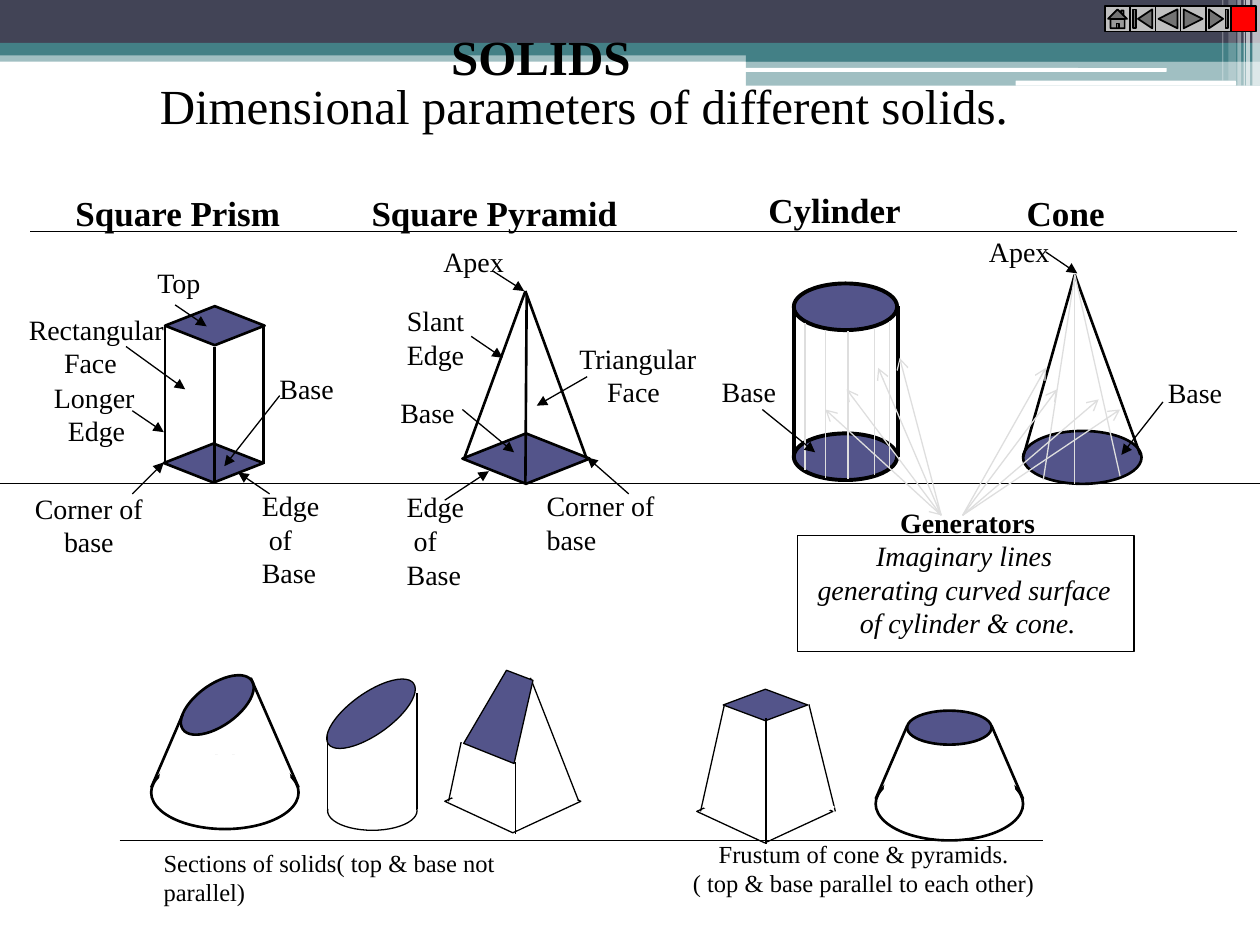
from lxml import etree
from pptx import Presentation
from pptx.dml.color import RGBColor
from pptx.enum.shapes import MSO_CONNECTOR, MSO_SHAPE
from pptx.enum.text import MSO_ANCHOR, MSO_AUTO_SIZE, PP_ALIGN
from pptx.oxml.ns import qn
from pptx.util import Inches, Pt

RECTANGLE, ROUNDED = MSO_SHAPE.RECTANGLE, MSO_SHAPE.ROUNDED_RECTANGLE
OVAL, DIAMOND = MSO_SHAPE.OVAL, MSO_SHAPE.DIAMOND
STRAIGHT = MSO_CONNECTOR.STRAIGHT
LEFT, CENTER = PP_ALIGN.LEFT, PP_ALIGN.CENTER
TOP = MSO_ANCHOR.TOP
FIT_SHAPE = MSO_AUTO_SIZE.SHAPE_TO_FIT_TEXT
NAVIGATION = (MSO_SHAPE.ACTION_BUTTON_HOME, MSO_SHAPE.ACTION_BUTTON_BEGINNING,
              MSO_SHAPE.ACTION_BUTTON_BACK_OR_PREVIOUS, MSO_SHAPE.ACTION_BUTTON_FORWARD_OR_NEXT,
              MSO_SHAPE.ACTION_BUTTON_END, MSO_SHAPE.ACTION_BUTTON_CUSTOM)
FONT = "Times New Roman"
BLACK, WHITE, PURPLE, TEAL, PALE = "000000", "FFFFFF", "53548A", "438086", "DEDEDE"
TILT = 324.6


def color(value):
    """Turn a hex string into a colour."""
    return RGBColor.from_string(value)


def paint(shape, fill, line=None, width=0.75, opacity=100):
    """Set the fill, opacity and outline of a shape."""
    shape.shadow.inherit = False
    shape.fill.solid()
    shape.fill.fore_color.rgb = color(fill)
    if opacity < 100:
        fill_color = shape._element.spPr.find(qn("a:solidFill"))[0]
        etree.SubElement(fill_color, qn("a:alpha")).set("val", str(opacity * 1000))
    if line:
        shape.line.color.rgb = color(line)
        shape.line.width = Pt(width)
    else:
        shape.line.fill.background()


def write(shape, paragraphs, size, align=LEFT, wrap=False):
    """Write (text, style letters, indent) paragraphs into a shape."""
    frame = shape.text_frame
    frame.word_wrap, frame.auto_size, frame.vertical_anchor = wrap, FIT_SHAPE, TOP
    for index, (text, style, indent) in enumerate(paragraphs):
        paragraph = frame.add_paragraph() if index else frame.paragraphs[0]
        paragraph.alignment = align
        if indent:
            paragraph._p.get_or_add_pPr().set("marL", str(Inches(indent)))
        run = paragraph.add_run()
        run.text = text
        run.font.name, run.font.size = FONT, Pt(size)
        run.font.bold, run.font.italic = "b" in style, "i" in style
        run.font.color.rgb = color(BLACK)


class Region:
    """A part of the slide whose contents are measured from its own corner."""

    def __init__(self, shapes, left, top):
        """Keep the shape collection and the corner in inches."""
        self.shapes, self.left, self.top = shapes, left, top

    def place(self, x, y):
        """Return slide lengths for a point of the region."""
        return Inches(self.left + x), Inches(self.top + y)

    def group(self, x=0, y=0):
        """Open a group whose corner lies at the given point."""
        return Region(self.shapes.add_group_shape().shapes, self.left + x, self.top + y)

    def shape(self, kind, box, fill, line=None, width=0.75, opacity=100, rotation=0):
        """Add a preset shape."""
        x, y, w, h = box
        shape = self.shapes.add_shape(kind, *self.place(x, y), Inches(w), Inches(h))
        shape.rotation = rotation
        paint(shape, fill, line, width, opacity)

    def line(self, start, end, width=0.75, line=BLACK, **arrowheads):
        """Add a straight line; headEnd and tailEnd name its arrowheads."""
        connector = self.shapes.add_connector(STRAIGHT, *self.place(*start), *self.place(*end))
        connector.line.color.rgb = color(line)
        connector.line.width = Pt(width)
        for tag in sorted(arrowheads):
            etree.SubElement(connector.line._get_or_add_ln(), qn("a:" + tag)).set("type", arrowheads[tag])
        etree.SubElement(connector._element.spPr, qn("a:effectLst"))

    def pointer(self, start, end):
        """Add a line with a triangle at its end."""
        self.line(start, end, tailEnd="triangle")

    def label(self, box, *lines, size=16, style="", indent=0, align=LEFT, wrap=False):
        """Add a text box; indent applies to every line after the first."""
        x, y, w, h = box
        shape = self.shapes.add_textbox(*self.place(x, y), Inches(w), Inches(h))
        write(shape, [(text, style, indent if i else 0) for i, text in enumerate(lines)], size, align, wrap)

    def heading(self, x, y, width, text):
        """Add the bold name of a solid."""
        self.label((x, y, width, 0.43), text, size=20, style="b")


def add_header(slide, left, top):
    """Draw the banner, the title and the subtitle."""
    banner = Region(slide.shapes, left, top)
    for box, fill, opacity in (((0, 0.4, 10, 0.09), TEAL, 50), ((0, 0, 10, 0.34), "424456", 100),
                               ((0, 0.34, 10, 0.1), TEAL, 100), ((5.92, 0.39, 4.08, 0.1), TEAL, 100),
                               ((5.92, 0.48, 4.08, 0.2), TEAL, 50)):
        banner.shape(RECTANGLE, box, fill, opacity=opacity)
    banner.shape(ROUNDED, (5.91, 0.54, 3.35, 0.03), WHITE)
    banner.shape(ROUNDED, (8.06, 0.64, 1.75, 0.04), WHITE)
    for x, width, height, opacity in ((9.94, 0.06, 0.68, 65), (9.89, 0.03, 0.68, 65), (9.87, 0.01, 0.68, 60),
                                      (9.82, 0.03, 0.68, 40), (9.75, 0.06, 0.64, 20), (9.7, 0.01, 0.64, 30)):
        banner.shape(RECTANGLE, (x, 0, width, height), WHITE, opacity=opacity)
    title = slide.shapes.title
    slide.shapes._spTree.append(title._element)
    title.left, title.top = banner.place(3.48, 0.16)
    title.width, title.height = Inches(1.63), Inches(0.57)
    write(title, [("SOLIDS", "b", 0)], 28)
    banner.label((1.17, 0.55, 6.94, 0.57), "Dimensional parameters of different solids.", size=28)


def add_navigation(slide, left, top, size):
    """Draw the row of navigation buttons."""
    row = Region(slide.shapes, left, top).group()
    for index, kind in enumerate(NAVIGATION):
        fill = "FF0000" if kind == NAVIGATION[-1] else "C0C0C0"
        row.shape(kind, (index * size, 0, size, size), fill, BLACK, 1)


def add_prism(slide, left, top):
    """Draw the labelled square prism."""
    region = Region(slide.shapes, left, top)
    solid = region.group()
    solid.shape(DIAMOND, (1.31, 1.43, 0.79, 0.31), PURPLE, BLACK, 1.5)
    for x in (1.31, 2.09):
        solid.line((x, 1.58), (x, 2.68), 1.5)
    solid.shape(DIAMOND, (1.3, 2.52, 0.79, 0.31), PURPLE, BLACK, 1.5)
    solid.line((1.7, 2.83), (1.7, 1.75), 1.5)
    for start, end in (((1, 1.75), (1.47, 2.09)), ((1.39, 1.42), (1.64, 1.59)), ((1.05, 2.26), (1.3, 2.43)),
                       ((1.05, 2.92), (1.3, 2.67)), ((2.14, 2.92), (1.89, 2.75)), ((2.22, 2.14), (1.78, 2.7))):
        region.pointer(start, end)
    region.heading(0.5, 0.47, 1.83, "Square Prism")
    region.label((1.15, 1.06, 0.56, 0.37), "Top")
    region.label((0.13, 1.43, 1.28, 0.64), "Rectangular", "Face", indent=0.28)
    region.label((0.33, 1.97, 0.9, 0.64), "Longer", "Edge", indent=0.11)
    region.label((2.12, 1.9, 0.63, 0.37), "Base")
    region.label((1.98, 2.83, 0.66, 0.9), "Edge", " of", "Base")
    region.label((0.01, 2.85, 1.39, 0.64), "Corner of base", align=CENTER, wrap=True)


def add_pyramid(slide, left, top):
    """Draw the labelled square pyramid."""
    region = Region(slide.shapes, left, top)
    solid = region.group()
    for x in (0.68, 1.66):
        solid.line((1.17, 1.31), (x, 2.65), 1.5)
    solid.shape(DIAMOND, (0.67, 2.44, 1.01, 0.4), PURPLE, BLACK, 1.5)
    solid.line((1.18, 1.34), (1.17, 2.84), 1.5)
    for start, end in (((0.74, 1.67), (0.99, 1.84)), ((1.66, 1.99), (1.26, 2.22)), ((0.91, 1.15), (1.16, 1.31)),
                       ((1.99, 2.92), (1.66, 2.63)), ((0.53, 2.97), (0.88, 2.74)), ((0.67, 2.25), (1.08, 2.59))):
        region.pointer(start, end)
    region.heading(-0.15, 0.47, 2.15, "Square Pyramid")
    region.label((0.42, 0.89, 0.68, 0.37), "Apex")
    region.label((0.13, 1.36, 0.72, 0.64), "Slant", "Edge")
    region.label((1.5, 1.66, 1.14, 0.64), "Triangular", "Face", indent=0.22)
    region.label((0.08, 2.09, 0.63, 0.37), "Base")
    region.label((0.13, 2.84, 0.66, 0.9), "Edge", " of", "Base")
    region.label((1.24, 2.83, 1.39, 0.64), "Corner of base", wrap=True)


def add_cylinder(slide, left, top):
    """Draw the labelled cylinder with its generators."""
    region = Region(slide.shapes, left, top)
    solid = region.group()
    for y in (1.25, 2.44):
        solid.shape(OVAL, (1.3, y, 0.82, 0.37), PURPLE, BLACK, 2.25)
    for x in (1.3, 2.13):
        solid.line((x, 1.43), (x, 2.63), 2.25)
    for x, y in ((1.39, 1.56), (1.55, 1.62), (1.73, 1.63), (1.94, 1.6), (2.06, 1.55)):
        solid.line((x, y), (x, y + 1.17), line=PALE)
    region.pointer((1.05, 2.25), (1.47, 2.59))
    region.heading(1, 0.45, 1.25, "Cylinder")
    region.label((0.63, 1.92, 0.63, 0.37), "Base")


def add_cone(slide, left, top):
    """Draw the labelled cone with its generators."""
    region = Region(slide.shapes, left, top)
    solid = region.group()
    solid.shape(OVAL, (1.12, 2.42, 0.94, 0.42), PURPLE, BLACK, 1.5)
    for end in ((1.12, 2.63), (2.05, 2.61)):
        solid.line((1.53, 1.18), end, 1.5)
    for end in ((1.28, 2.81), (1.89, 2.78), (1.53, 2.84)):
        solid.line((1.53, 1.18), end, line=PALE)
    region.pointer((1.3, 1), (1.55, 1.17))
    region.pointer((2.23, 2.19), (1.9, 2.61))
    region.heading(1.05, 0.47, 0.82, "Cone")
    region.label((0.75, 0.81, 0.68, 0.37), "Apex")
    region.label((2.17, 1.93, 0.63, 0.37), "Base")


def add_generators_note(slide, left, top):
    """Draw the note on generators and its arrows."""
    region = Region(slide.shapes, left, top)
    region.line((0.55, 1.25), (1.47, 2.09), line=PALE, headEnd="arrow", tailEnd="arrow")
    fans = ((1.47, ((0.72, 1.09), (0.97, 0.92), (1.14, 0.84))),
            (1.64, ((2.3, 0.92), (2.39, 1.09), (2.72, 1.17), (2.89, 1.25))))
    for x, tips in fans:
        for tip in tips:
            region.line(tip, (x, 2.09), line=PALE, headEnd="arrow")
    region.shape(RECTANGLE, (0.33, 2.25, 2.67, 0.92), WHITE, BLACK)
    note = region.shapes.add_textbox(*region.place(0.38, 1.96), Inches(2.6), Inches(1.17))
    write(note, [("Generators", "b", 0), ("Imaginary lines ", "i", 0),
                 ("generating curved surface ", "i", 0), ("of cylinder & cone.", "i", 0)], 16, CENTER)


def add_truncated_cone(region, x, y, lid, right_edge, rotation=0):
    """Draw a cone cut by a plane, measured from its base."""
    solid = region.group(x, y)
    solid.shape(OVAL, (0, 0, 1.17, 0.58), WHITE, BLACK, 1.5)
    solid.shape(OVAL, lid, PURPLE, BLACK, 1.5, rotation=rotation)
    solid.line((0.25, -0.33), (0, 0.25), 1.5)
    solid.line(right_edge, (1.17, 0.25), 1.5)
    solid.shape(OVAL, (0.07, -0.01, 1.03, 0.35), WHITE, WHITE)


def add_sections(slide, left, top):
    """Draw the cut cone, cylinder and pyramid with their caption."""
    region = Region(slide.shapes, left, top)
    add_truncated_cone(region, 0.2, 1, (0.19, -0.57, 0.67, 0.33), (0.79, -0.62), TILT)
    pyramid = region.group()
    pyramid.shape(DIAMOND, (2.53, 1.11, 1.08, 0.5), WHITE, BLACK)
    pyramid.line((2.66, 0.89), (2.56, 1.36))
    pyramid.shape(DIAMOND, (2.59, 1.07, 1.03, 0.51), WHITE, WHITE)
    pyramid.line((3.09, 1.05), (3.09, 1.62))
    pyramid.line((3.21, 0.38), (3.59, 1.35))
    corners = [pyramid.place(*point) for point in ((3.08, 1.06), (3.23, 0.4), (3.02, 0.32), (2.68, 0.9))]
    builder = pyramid.shapes.build_freeform(*corners[0])
    builder.add_line_segments(corners[1:], close=True)
    paint(builder.convert_to_shape(), PURPLE, BLACK)
    cylinder = region.group()
    cylinder.shape(OVAL, (1.6, 1.28, 0.71, 0.31), WHITE, BLACK)
    cylinder.shape(OVAL, (1.53, 0.5, 0.83, 0.33), PURPLE, BLACK, rotation=TILT)
    cylinder.shape(RECTANGLE, (1.61, 1.25, 0.7, 0.17), WHITE, WHITE)
    cylinder.line((1.6, 0.83), (1.6, 1.42))
    cylinder.line((2.31, 0.5), (2.31, 1.42))
    region.label((0.2, 1.68, 3.2, 0.57), "Sections of solids( top & base not parallel)", size=14, wrap=True)


def add_frustums(slide, left, top):
    """Draw the frustums of pyramid and cone with their caption."""
    region = Region(slide.shapes, left, top)
    add_truncated_cone(region, 1.95, 1.09, (0.25, -0.45, 0.67, 0.27), (0.92, -0.33))
    pyramid = region.group()
    pyramid.shape(DIAMOND, (0.53, 1.19, 1.08, 0.5), WHITE, BLACK)
    pyramid.shape(DIAMOND, (0.74, 0.47, 0.67, 0.25), PURPLE, BLACK)
    pyramid.line((0.75, 0.59), (0.56, 1.44))
    pyramid.line((1.42, 0.59), (1.63, 1.44))
    pyramid.shape(DIAMOND, (0.59, 1.15, 1.03, 0.51), WHITE, WHITE)
    pyramid.line((1.08, 0.7), (1.08, 1.7))
    region.label((0.4, 1.61, 2.91, 0.8), "Frustum of cone & pyramids.",
                 "( top & base parallel to each other)", size=14, align=CENTER, wrap=True)


def main():
    """Build and save the slide."""
    presentation = Presentation()
    presentation.slide_width, presentation.slide_height = Inches(10), Inches(7.5)
    slide = presentation.slides.add_slide(presentation.slide_layouts[5])
    add_header(slide, 0, 0)
    rules = Region(slide.shapes, 0, 0)
    for start, end, y in ((0, 10, 3.84), (0.24, 9.82, 1.84)):
        rules.line((start, y), (end, y))
    add_prism(slide, 0, 1)
    add_pyramid(slide, 3, 1)
    add_cylinder(slide, 5, 1)
    add_cone(slide, 7, 1)
    add_generators_note(slide, 6, 2)
    add_frustums(slide, 5, 5)
    add_sections(slide, 1, 5)
    rules.line((0.95, 6.67), (8.28, 6.67))
    add_navigation(slide, 8.77, 0.05, 0.2)
    presentation.save("out.pptx")


if __name__ == "__main__":
    main()
